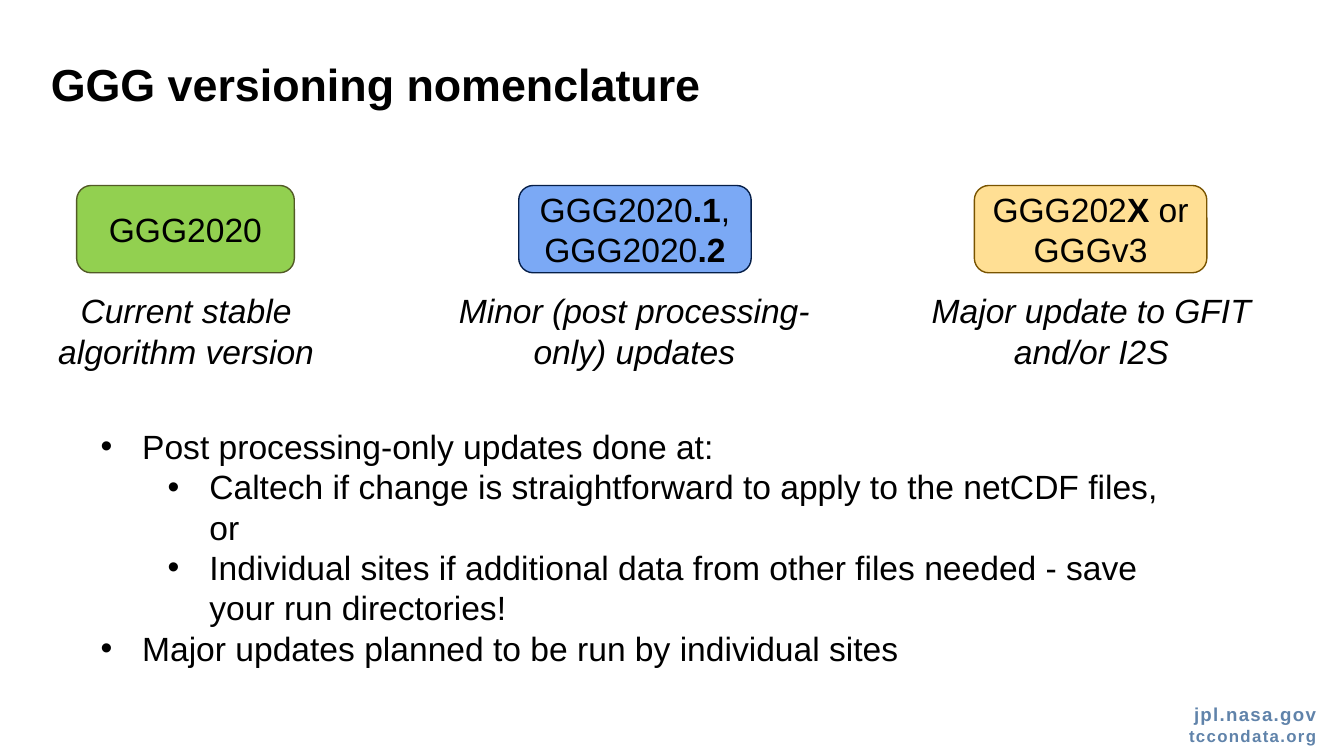
"""Build the GGG versioning nomenclature slide."""
from lxml.etree import SubElement
from pptx import Presentation
from pptx.dml.color import RGBColor
from pptx.enum.shapes import MSO_SHAPE
from pptx.enum.text import MSO_ANCHOR as ANCHOR, PP_ALIGN as ALIGN
from pptx.oxml.ns import qn
from pptx.util import Inches, Pt


def rgb(value):
    return RGBColor.from_string(value)


def add_run(p, text, size=18, color="000000", bold=False, italic=False):
    r = p.add_run()
    r.text = text
    r.font.name = "Arial"
    r.font.size = Pt(size)
    r.font.bold = bold
    r.font.italic = italic
    r.font.color.rgb = rgb(color)
    return r


prs = Presentation()
prs.slide_width = Inches(10)
prs.slide_height = Inches(10 * 9 / 16)
s = prs.slides.add_slide(prs.slide_layouts[6])

tf = s.shapes.add_textbox(Inches(8.54), Inches(5.16), Inches(1.35), Inches(0.46)).text_frame
tf.word_wrap = True
tf.vertical_anchor = ANCHOR.MIDDLE
for i, (text, size) in enumerate([("jpl.nasa.gov", 10), ("tccondata.org", 9)]):
    p = tf.add_paragraph() if i else tf.paragraphs[0]
    p.alignment = ALIGN.RIGHT
    r = add_run(p, text, size, "6083AA", bold=True)
    r.font._element.set("spc", "70")

tf = s.shapes.add_textbox(Inches(0.28), Inches(0.37), Inches(8.26), Inches(0.47)).text_frame
tf.word_wrap = True
add_run(tf.paragraphs[0], "GGG versioning nomenclature", 24, bold=True)

versions = [
    (0.57, 1.62, "92D050", "525A26", ["GGG2020"],
     0.12, 2.53, "Current stable algorithm version"),
    (3.86, 1.73, "7BA9F5", "051E48", ["GGG2020", ".1", ", GGG2020", ".2"],
     3.28, 2.88, "Minor (post processing-only) updates"),
    (7.25, 1.73, "FFDF94", "795400", ["GGG202", "X", " or GGGv3"],
     6.68, 2.88, "Major update to GFIT and/or I2S"),
]
for left, width, fill, line, parts, note_left, note_width, note in versions:
    sp = s.shapes.add_shape(MSO_SHAPE.ROUNDED_RECTANGLE,
                            Inches(left), Inches(1.38), Inches(width), Inches(0.65))
    sp.shadow.inherit = False
    sp.fill.solid()
    sp.fill.fore_color.rgb = rgb(fill)
    sp.line.color.rgb = rgb(line)
    sp.line.width = Pt(0.75)
    tf = sp.text_frame
    tf.word_wrap = True
    tf.vertical_anchor = ANCHOR.MIDDLE
    p = tf.paragraphs[0]
    p.alignment = ALIGN.CENTER
    for i, part in enumerate(parts):
        add_run(p, part, bold=i % 2 == 1)

    tf = s.shapes.add_textbox(Inches(note_left), Inches(2.11),
                              Inches(note_width), Inches(0.71)).text_frame
    tf.word_wrap = True
    p = tf.paragraphs[0]
    p.alignment = ALIGN.CENTER
    add_run(p, note, italic=True)

bullets = [
    (0, "Post processing-only updates done at:"),
    (1, "Caltech if change is straightforward to apply to the netCDF files, or"),
    (1, "Individual sites if additional data from other files needed - save your run directories!"),
    (0, "Major updates planned to be run by individual sites"),
]
tf = s.shapes.add_textbox(Inches(0.65), Inches(3.12), Inches(8.34), Inches(1.92)).text_frame
tf.word_wrap = True
for i, (level, text) in enumerate(bullets):
    p = tf.add_paragraph() if i else tf.paragraphs[0]
    p.level = level
    pPr = p._p.get_or_add_pPr()
    pPr.set("marL", str(Inches(0.31 + 0.5 * level)))
    pPr.set("indent", str(Inches(-0.31)))
    SubElement(pPr, qn("a:buFont")).set("typeface", "Arial")
    SubElement(pPr, qn("a:buChar")).set("char", "•")
    add_run(p, text)

prs.save("out.pptx")
